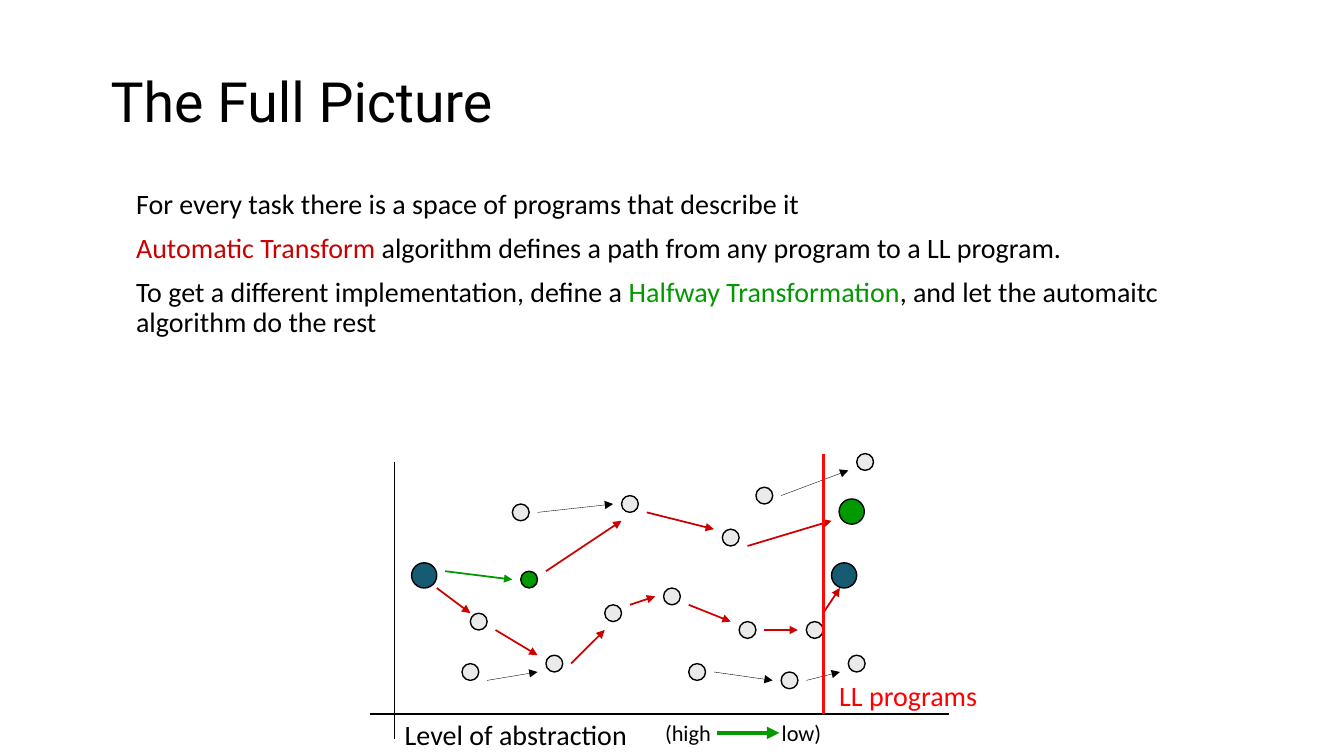
from lxml import etree
from pptx import Presentation
from pptx.dml.color import RGBColor
from pptx.enum.shapes import MSO_CONNECTOR, MSO_SHAPE
from pptx.enum.text import MSO_ANCHOR
from pptx.oxml.ns import qn
from pptx.util import Cm, Pt

STRAIGHT = MSO_CONNECTOR.STRAIGHT
OVAL = MSO_SHAPE.OVAL
TOP, MIDDLE = MSO_ANCHOR.TOP, MSO_ANCHOR.MIDDLE

BLACK, GREY, BLUE = "000000", "EAEAEA", "175B73"
RED, GREEN, BRIGHT, PURE = "CC0000", "009900", "FF0707", "FF0000"

# Diagram places are in grid steps, twelve to 2.54 cm
DOTS = [
    (56, 73), (65, 78), (72, 72), (79, 70), (88, 74), (96, 74),
    (61, 60), (82, 79), (86, 63), (55, 79), (74, 59), (90, 58),
    (93, 80), (101, 78), (102, 54),
]
OTHERS = [
    (58, 81, 64, 80), (64, 61, 73, 60), (93, 59, 101, 56),
    (85, 80, 92, 81), (96, 81, 100, 80),
]
LOWER = [
    (52, 70, 56, 73), (59, 75, 64, 78), (68, 79, 72, 75),
    (75, 72, 78, 71), (82, 72, 87, 74), (91, 75, 95, 75),
    (98, 73, 100, 70),
]
UPPER = [(65, 68, 74, 62), (77, 61, 85, 63), (89, 65, 99, 62)]

BODY = [
    [("For every task there is a space of programs that describe it", BLACK)],
    [("Automatic Transform", RED),
     (" algorithm defines a path from any program to a LL program.", BLACK)],
    [("To get a different implementation, define a ", BLACK),
     ("Halfway Transformation", GREEN),
     (", and let the automaitc algorithm do the rest", BLACK)],
]


def color(code):
    return RGBColor.from_string(code)


def grid(steps):
    return Cm(steps * 2.54 / 12)


def add_text(slide, box, paras, size, font="Calibri", anchor=TOP,
             spacing=1.0, before=0):
    """Box is left, top, width, height in cm; paras are lists of runs."""
    frame = slide.shapes.add_textbox(*map(Cm, box)).text_frame
    frame.word_wrap = True
    frame.vertical_anchor = anchor
    for i, runs in enumerate(paras):
        para = frame.add_paragraph() if i else frame.paragraphs[0]
        para.font.name = font
        para.font.size = Pt(size)
        para.line_spacing = spacing
        para.space_before = Pt(before)
        for text, code in runs:
            run = para.add_run()
            run.text = text
            run.font.color.rgb = color(code)


def add_dot(slide, x, y, size=2, fill=GREY):
    dot = slide.shapes.add_shape(OVAL, grid(x), grid(y), grid(size), grid(size))
    dot.shadow.inherit = False
    dot.fill.solid()
    dot.fill.fore_color.rgb = color(fill)
    dot.line.color.rgb = color(BLACK)
    dot.line.width = Pt(1)


def add_line(slide, ends, code=BLACK, width=1.0, arrow=False):
    line = slide.shapes.add_connector(STRAIGHT, *map(grid, ends))
    line.line.color.rgb = color(code)
    line.line.width = Pt(width)
    if arrow:
        tip = etree.SubElement(line.line._get_or_add_ln(), qn("a:tailEnd"))
        tip.set("type", "triangle")
    etree.SubElement(line._element.spPr, qn("a:effectLst"))


def main():
    deck = Presentation()
    deck.slide_width, deck.slide_height = Cm(33.87), Cm(19.05)
    slide = deck.slides.add_slide(deck.slide_layouts[6])

    # Title and body
    add_text(slide, (2.54, 1.69, 28.79, 1.91), [[("The Full Picture", BLACK)]],
             39.6, "Roboto", MIDDLE, 0.9)
    add_text(slide, (3.18, 4.66, 28.14, 5.93), BODY, 20, spacing=0.9, before=10)

    # Space of programs
    for x, y in DOTS:
        add_dot(slide, x, y)

    # Axes and their labels
    add_line(slide, (47, 55, 47, 88))
    add_line(slide, (44, 85, 113, 85))
    add_text(slide, (9.95, 17.96, 6.3, 1.1),
             [[("Level of abstraction", BLACK)]], 20)
    for x, word in [(16.51, "(high"), (19.45, "low)")]:
        add_text(slide, (x, 17.99, 2, 0.94), [[(word, BLACK)]], 16)
    add_line(slide, (85.4, 87.25, 92.8, 87.25), GREEN, 3, True)

    # Other transforms
    for ends in OTHERS:
        add_line(slide, ends, width=0.25, arrow=True)

    # Start, halfway and end programs
    add_dot(slide, 49, 67, 3, BLUE)
    add_dot(slide, 99, 67, 3, BLUE)
    add_dot(slide, 99.9, 59.4, 3, GREEN)
    add_dot(slide, 62, 68, fill=GREEN)

    # Automatic paths and the halfway step
    for ends in LOWER + UPPER:
        add_line(slide, ends, RED, 1.25, True)
    add_line(slide, (53, 68, 61, 69), GREEN, 1.25, True)

    # Border of the LL programs
    add_line(slide, (98, 54, 98, 85), BRIGHT, 2.25)
    add_text(slide, (20.9, 16.97, 4.2, 1.1), [[("LL programs", PURE)]], 20)

    deck.save("out.pptx")


if __name__ == "__main__":
    main()
